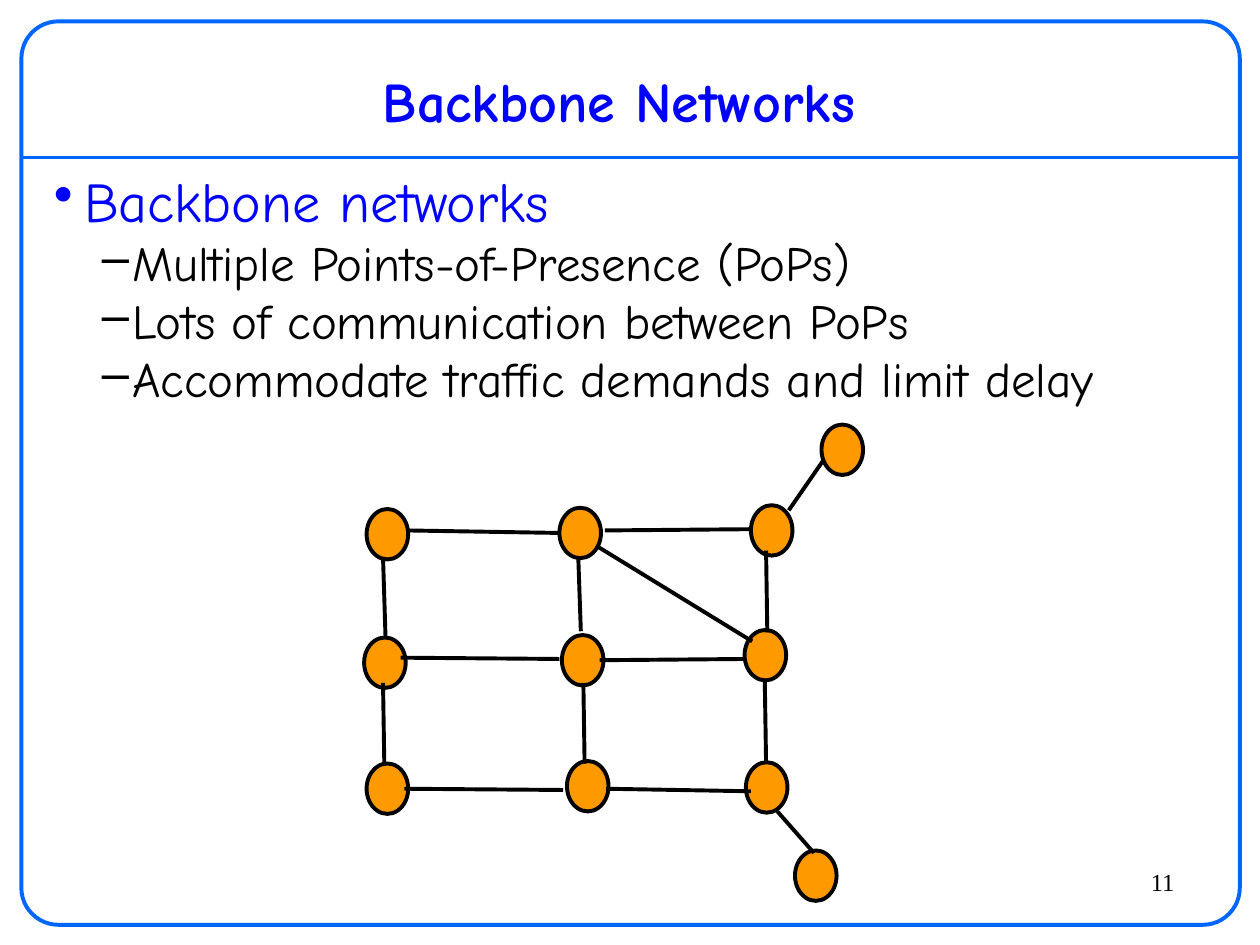
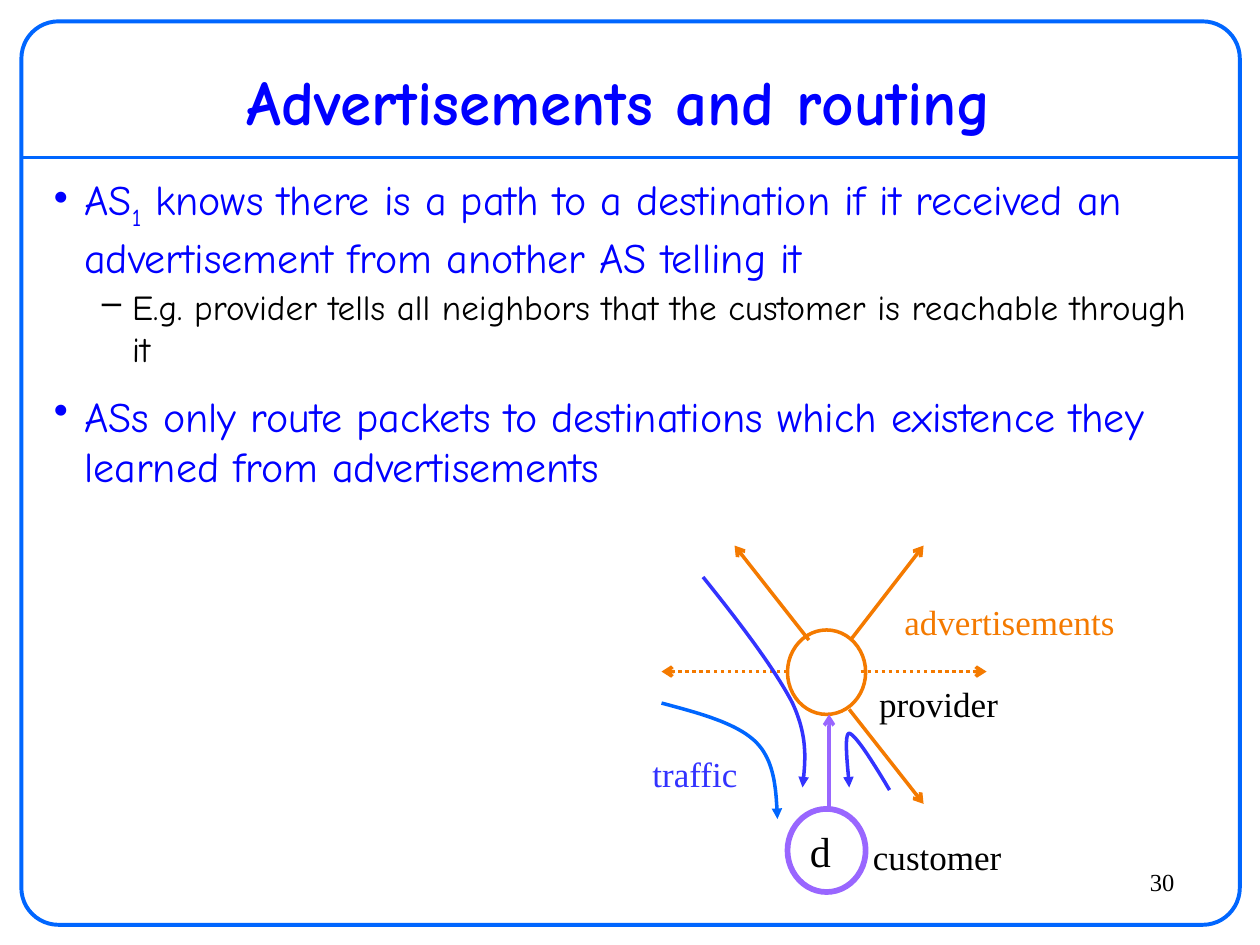
from dataclasses import dataclass
from typing import NamedTuple, Optional

import pptx
import pptx.dml.color
import pptx.enum.dml
import pptx.enum.shapes
import pptx.enum.text
import pptx.oxml
import pptx.oxml.ns
import pptx.util
from pptx.util import Inches

Shape = pptx.enum.shapes.MSO_SHAPE
Align = pptx.enum.text.PP_ALIGN
Anchor = pptx.enum.text.MSO_ANCHOR
Point = tuple[float, float]


@dataclass(frozen=True)
class Theme:
    heading_font: str = "Comic Neue"
    label_font: str = "Times New Roman"
    frame: str = "0066FF"
    heading: str = "0000FF"
    ink: str = "000000"
    node: str = "FF9900"
    advert: str = "F47A00"
    customer: str = "9966FF"
    traffic: str = "3333FF"
    page_size: int = 14
    label_size: int = 20
    destination_size: int = 24
    thick: float = 2.25
    thin: float = 2
    heavy: float = 3.25


THEME = Theme()


class Box(NamedTuple):
    left: float
    top: float
    width: float
    height: float


class Span(NamedTuple):
    text: str
    size: float
    color: str = THEME.ink
    font: str = THEME.label_font
    bold: bool = False
    baseline: int = 0


class Level(NamedTuple):
    bullet: str
    indent: float
    space_share: float
    color: str


class Item(NamedTuple):
    level: Level
    size: int
    texts: tuple[str, ...]
    subscript: Optional[int] = None


class Link(NamedTuple):
    start: Point
    end: Point
    color: str = THEME.ink
    width: float = THEME.thick
    arrow: Optional[str] = None
    dotted: bool = False


class Flow(NamedTuple):
    start: Point
    curves: tuple[tuple[Point, Point, Point], ...]
    color: str


class Label(NamedTuple):
    text: str
    box: Box
    color: str = THEME.ink
    size: int = THEME.label_size
    wrap: bool = False


POINT_LEVEL = Level("•", 0.24, 0.5, THEME.heading)
DETAIL_LEVEL = Level("–", 0.62, 0.1, THEME.ink)
HANGING = 0.24
CURVE_STEPS = 20

NODE_WIDTH, NODE_HEIGHT = 0.33, 0.4
POPS = [
    (2.91, 4.04), (4.44, 4.03), (5.96, 4.01),
    (2.89, 5.06), (4.46, 5.04), (5.91, 5.0),
    (2.91, 6.06), (4.5, 6.04), (5.92, 6.05),
    (6.52, 3.37), (6.31, 6.75),
]
POP_LINKS = [
    Link((4.45, 4.23), (3.23, 4.21)), Link((5.95, 4.2), (4.8, 4.21)),
    Link((4.44, 5.23), (3.18, 5.22)), Link((5.92, 5.23), (4.76, 5.24)),
    Link((4.47, 6.27), (3.21, 6.26)), Link((5.96, 6.28), (4.81, 6.26)),
    Link((3.06, 5.06), (3.04, 4.42)), Link((3.05, 6.06), (3.04, 5.42)),
    Link((4.61, 5.01), (4.59, 4.43)), Link((4.64, 6.06), (4.63, 5.42)),
    Link((6.09, 5.02), (6.08, 4.37)), Link((6.08, 6.05), (6.07, 5.4)),
    Link((6.46, 6.77), (6.17, 6.44)), Link((6.53, 3.66), (6.26, 4.05)),
    Link((5.97, 5.09), (4.73, 4.33)),
]


def advert(start: Point, end: Point, dotted: bool = False) -> Link:
    return Link(start, end, THEME.advert, THEME.thin, "arrow", dotted)


ROUTING_LINKS = [
    Link((6.58, 6.42), (6.58, 5.67), THEME.customer, THEME.thin, "arrow"),
    advert((6.83, 5.33), (7.83, 5.33), dotted=True),
    advert((6.25, 5.33), (5.25, 5.33), dotted=True),
    advert((6.75, 5.08), (7.33, 4.33)),
    advert((6.42, 5.08), (5.83, 4.33)),
    advert((6.74, 5.63), (7.33, 6.38)),
]
TRAFFIC_FLOWS = [
    Flow((5.58, 4.58), (((5.87, 4.94), (6.15, 5.31), (6.29, 5.58)),
                        ((6.42, 5.86), (6.39, 6.06), (6.37, 6.25))), THEME.traffic),
    Flow((5.25, 5.58), (((5.55, 5.66), (5.85, 5.74), (6, 5.89)),
                        ((6.15, 6.04), (6.16, 6.27), (6.17, 6.5))), THEME.frame),
    Flow((7.06, 6.27), (((6.93, 6.05), (6.79, 5.83), (6.74, 5.82)),
                        ((6.69, 5.82), (6.74, 6.18), (6.74, 6.25))), THEME.traffic),
]
ROUTING_LABELS = [
    Label("d", Box(6.33, 6.5, 0.37, 0.5), size=THEME.destination_size),
    Label("customer", Box(6.83, 6.58, 1.22, 0.43)),
    Label("provider", Box(6.88, 5.37, 1.14, 0.43)),
    Label("advertisements", Box(7.08, 4.72, 1.87, 0.43), THEME.advert),
    Label("traffic", Box(5.08, 5.92, 1, 0.43), THEME.traffic, wrap=True),
]


def rgb(color: str) -> pptx.dml.color.RGBColor:
    return pptx.dml.color.RGBColor.from_string(color)


def append_xml(parent, tag: str, **attributes: str) -> None:
    child = pptx.oxml.parse_xml(f"<a:{tag} {pptx.oxml.ns.nsdecls('a')}/>")
    for key, value in attributes.items():
        child.set(key, value)
    parent.append(child)


def style_line(line, color: str, width: float) -> None:
    line.color.rgb = rgb(color)
    line.width = pptx.util.Pt(width)


def add_outline(slide, preset, box: Box, color: str, width: float,
                fill: Optional[str] = None):
    outline = slide.shapes.add_shape(preset, *map(Inches, box))
    outline.shadow.inherit = False
    if fill:
        outline.fill.solid()
        outline.fill.fore_color.rgb = rgb(fill)
    else:
        outline.fill.background()
    style_line(outline.line, color, width)
    return outline


def add_link(slide, link: Link) -> None:
    connector = slide.shapes.add_connector(
        pptx.enum.shapes.MSO_CONNECTOR.STRAIGHT, *map(Inches, link.start + link.end))
    style_line(connector.line, link.color, link.width)
    if link.dotted:
        connector.line.dash_style = pptx.enum.dml.MSO_LINE.ROUND_DOT
    if link.arrow:
        append_xml(connector.line._get_or_add_ln(), "tailEnd", type=link.arrow)
    append_xml(connector._element.spPr, "effectLst")


def bezier(start: Point, first: Point, second: Point, end: Point) -> list[Point]:
    steps = [step / CURVE_STEPS for step in range(1, CURVE_STEPS + 1)]
    return [tuple((1 - t) ** 3 * a + 3 * (1 - t) ** 2 * t * b
                  + 3 * (1 - t) * t ** 2 * c + t ** 3 * d
                  for a, b, c, d in zip(start, first, second, end))
            for t in steps]


def add_flow(slide, flow: Flow) -> None:
    points = [flow.start]
    for curve in flow.curves:
        points += bezier(points[-1], *curve)
    start, *rest = [(Inches(x), Inches(y)) for x, y in points]
    builder = slide.shapes.build_freeform(*start)
    builder.add_line_segments(rest, close=False)
    route = builder.convert_to_shape()
    route.shadow.inherit = False
    route.fill.background()
    style_line(route.line, flow.color, THEME.thin)
    append_xml(route.line._get_or_add_ln(), "tailEnd", type="triangle")


def add_span(paragraph, span: Span) -> None:
    run = paragraph.add_run()
    run.text = span.text
    run.font.name = span.font
    run.font.size = pptx.util.Pt(span.size)
    run.font.bold = span.bold
    run.font.color.rgb = rgb(span.color)
    if span.baseline:
        run.font._element.set("baseline", str(span.baseline * 1000))


def add_text_frame(slide, box: Box, wrap: bool = True):
    frame = slide.shapes.add_textbox(*map(Inches, box)).text_frame
    frame.word_wrap = wrap
    return frame


def add_line_of_text(slide, box: Box, span: Span, align=Align.LEFT,
                     anchor=Anchor.TOP, wrap: bool = True):
    frame = add_text_frame(slide, box, wrap)
    frame.vertical_anchor = anchor
    frame.paragraphs[0].alignment = align
    add_span(frame.paragraphs[0], span)
    return frame


def add_label(slide, label: Label) -> None:
    frame = add_line_of_text(slide, label.box, Span(label.text, label.size, label.color),
                             wrap=label.wrap)
    frame.auto_size = pptx.enum.text.MSO_AUTO_SIZE.SHAPE_TO_FIT_TEXT


def add_items(slide, height: float, items: list[Item], line_spacing: float) -> None:
    frame = add_text_frame(slide, Box(0.33, 1.33, 9.42, height))
    for index, item in enumerate(items):
        paragraph = frame.add_paragraph() if index else frame.paragraphs[0]
        paragraph.line_spacing = line_spacing
        paragraph.space_before = pptx.util.Pt(item.size * item.level.space_share)
        properties = paragraph._p.get_or_add_pPr()
        properties.set("marL", str(Inches(item.level.indent)))
        properties.set("indent", str(-Inches(HANGING)))
        append_xml(properties, "buChar", char=item.level.bullet)
        for position, text in enumerate(item.texts):
            baseline = -25 if position == item.subscript else 0
            add_span(paragraph, Span(text, item.size, item.level.color,
                                     THEME.heading_font, baseline=baseline))


def add_framed_slide(deck, title: str, title_size: int, page: int):
    slide = deck.slides.add_slide(deck.slide_layouts[6])
    add_link(slide, Link((0.17, 1.25), (9.83, 1.25), THEME.frame))
    border = add_outline(slide, Shape.ROUNDED_RECTANGLE, Box(0.17, 0.17, 9.67, 7.17),
                         THEME.frame, THEME.thick)
    border.adjustments[0] = 0.041
    add_line_of_text(slide, Box(8.42, 6.83, 1, 0.42), Span(str(page), THEME.page_size),
                     Align.RIGHT)
    add_line_of_text(slide, Box(0.33, 0.42, 9.17, 0.75),
                     Span(title, title_size, THEME.heading, THEME.heading_font, True),
                     Align.CENTER, Anchor.MIDDLE)
    return slide


def build_backbone(deck) -> None:
    slide = add_framed_slide(deck, "Backbone Networks", 32, 11)
    details = ("Multiple Points-of-Presence (PoPs)",
               "Lots of communication between PoPs",
               "Accommodate traffic demands and limit delay")
    add_items(slide, 2.84, [Item(POINT_LEVEL, 32, ("Backbone networks",)),
                            *(Item(DETAIL_LEVEL, 28, (text,)) for text in details)], 0.9)
    for left, top in POPS:
        add_outline(slide, Shape.OVAL, Box(left, top, NODE_WIDTH, NODE_HEIGHT),
                    THEME.ink, THEME.thick, THEME.node)
    for link in POP_LINKS:
        add_link(slide, link)


def build_routing(deck) -> None:
    slide = add_framed_slide(deck, "Advertisements and routing", 36, 30)
    add_items(slide, 2.33, [
        Item(POINT_LEVEL, 24, ("AS", "1", " knows there is a path to a destination if it "
                               "received an advertisement from another AS telling it"), 1),
        Item(DETAIL_LEVEL, 20, ("E.g. provider tells all neighbors that the customer is "
                                "reachable through it",)),
        Item(POINT_LEVEL, 24, ("ASs only route packets to destinations which existence "
                               "they learned from advertisements",)),
    ], 1.0)
    add_outline(slide, Shape.OVAL, Box(6.25, 6.42, 0.62, 0.66), THEME.customer, THEME.heavy)
    add_outline(slide, Shape.OVAL, Box(6.25, 5, 0.62, 0.67), THEME.advert, THEME.thin)
    for link in ROUTING_LINKS:
        add_link(slide, link)
    for flow in TRAFFIC_FLOWS:
        add_flow(slide, flow)
    for label in ROUTING_LABELS:
        add_label(slide, label)


def main() -> None:
    deck = pptx.Presentation()
    deck.slide_width, deck.slide_height = Inches(10), Inches(7.5)
    build_backbone(deck)
    build_routing(deck)
    deck.save("out.pptx")


if __name__ == "__main__":
    main()
